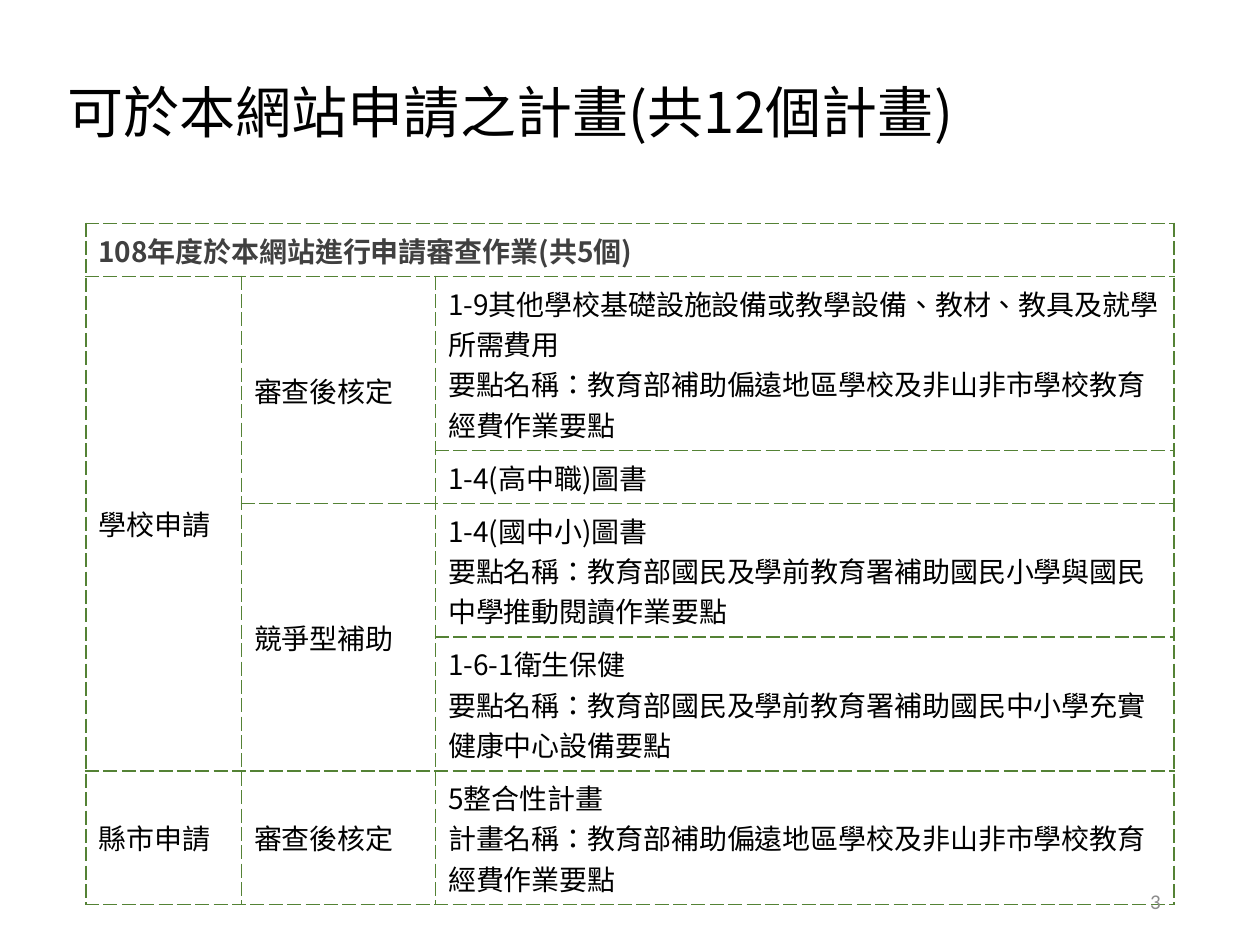
"""Build the slide listing the grant programmes open for application."""
from lxml import etree
from pptx import Presentation
from pptx import util as u
from pptx.dml.color import RGBColor
from pptx.enum import text
from pptx.oxml import ns

BLACK = RGBColor(0x00, 0x00, 0x00)
DARK = RGBColor(0x40, 0x40, 0x40)
GREY = RGBColor(0x8C, 0x8C, 0x8C)
GREEN = RGBColor(0x54, 0x82, 0x35)
CJK = "Noto Sans CJK SC"

COLUMNS = (89, 110.9, 421.9)
HEIGHTS = (30.4, 99.4, 30.4, 76.4, 76.4, 76.4)
MERGES = (((0, 0), (0, 2)), ((1, 0), (4, 0)), ((1, 1), (2, 1)), ((3, 1), (4, 1)))
REMOTE = "教育部補助偏遠地區學校及非山非市學校教育經費作業要點"
K12 = "要點名稱：教育部國民及學前教育署補助"
ROWS = (
    ("108年度於本網站進行申請審查作業(共5個)", "", ""),
    ("學校申請", "審查後核定",
     "1-9其他學校基礎設施設備或教學設備、教材、教具及就學所需費用\n要點名稱：" + REMOTE),
    ("", "", "1-4(高中職)圖書"),
    ("", "競爭型補助", "1-4(國中小)圖書\n" + K12 + "國民小學與國民中學推動閱讀作業要點"),
    ("", "", "1-6-1衛生保健\n" + K12 + "國民中小學充實健康中心設備要點"),
    ("縣市申請", "審查後核定", "5整合性計畫\n計畫名稱：" + REMOTE),
)


def write(tf, content, size=16, color=BLACK, font=CJK, bold=False, align=None, spacing=None):
    """Write each line of content as a formatted paragraph."""
    for i, line in enumerate(content.split("\n")):
        p = tf.paragraphs[0] if i == 0 else tf.add_paragraph()
        p.alignment = align
        p.line_spacing = spacing
        r = p.add_run()
        r.text = line
        r.font.size = u.Pt(size)
        r.font.bold = bold
        r.font.color.rgb = color
        r.font.name = font
        rPr = r.font._element
        rPr.set("lang", "zh-TW")
        rPr.find(ns.qn("a:latin")).addnext(etree.Element(ns.qn("a:ea"), typeface=font))


def add_text(s, content, left, top, width, height, **fmt):
    """Add a vertically centred text box."""
    sp = s.shapes.add_textbox(*map(u.Pt, (left, top, width, height)))
    tf = sp.text_frame
    tf.word_wrap = True
    tf.vertical_anchor = text.MSO_ANCHOR.MIDDLE
    write(tf, content, **fmt)


def set_borders(cell):
    """Give a cell dashed green lines on all four sides."""
    tcPr = cell._tc.get_or_add_tcPr()
    for side in ("lnL", "lnR", "lnT", "lnB"):
        ln = etree.SubElement(tcPr, ns.qn("a:" + side), w=str(u.Pt(1)))
        fill = etree.SubElement(ln, ns.qn("a:solidFill"))
        etree.SubElement(fill, ns.qn("a:srgbClr"), val=str(GREEN))
        etree.SubElement(ln, ns.qn("a:prstDash"), val="dash")


def add_programmes(s, left, top):
    """Add the table of programmes with its merged cells."""
    frame = s.shapes.add_table(len(ROWS), len(COLUMNS), u.Pt(left), u.Pt(top),
                               u.Pt(sum(COLUMNS)), u.Pt(sum(HEIGHTS)))
    table = frame.table
    table.first_row = table.horz_banding = False
    for column, width in zip(table.columns, COLUMNS):
        column.width = u.Pt(width)
    for i, (row, height) in enumerate(zip(ROWS, HEIGHTS)):
        table.rows[i].height = u.Pt(height)
        for j, content in enumerate(row):
            cell = table.cell(i, j)
            set_borders(cell)
            cell.fill.background()
            cell.vertical_anchor = text.MSO_ANCHOR.MIDDLE
            if content:
                write(cell.text_frame, content, bold=i == 0, color=BLACK if i else DARK)
    for first, last in MERGES:
        table.cell(*first).merge(table.cell(*last))


def main():
    """Build and save the slide."""
    prs = Presentation()
    prs.slide_width, prs.slide_height = u.Pt(720), u.Pt(540)
    s = prs.slides.add_slide(prs.slide_layouts[6])
    add_text(s, "可於本網站申請之計畫(共12個計畫)", 31.7, 36.7, 670.3, 58.3,
             size=32, spacing=0.9)
    add_programmes(s, 49, 127.6)
    add_text(s, "3", 508.3, 500.4, 162, 28.8, size=12, color=GREY, font="Calibri",
             align=text.PP_ALIGN.RIGHT)
    prs.save("out.pptx")


if __name__ == "__main__":
    main()
